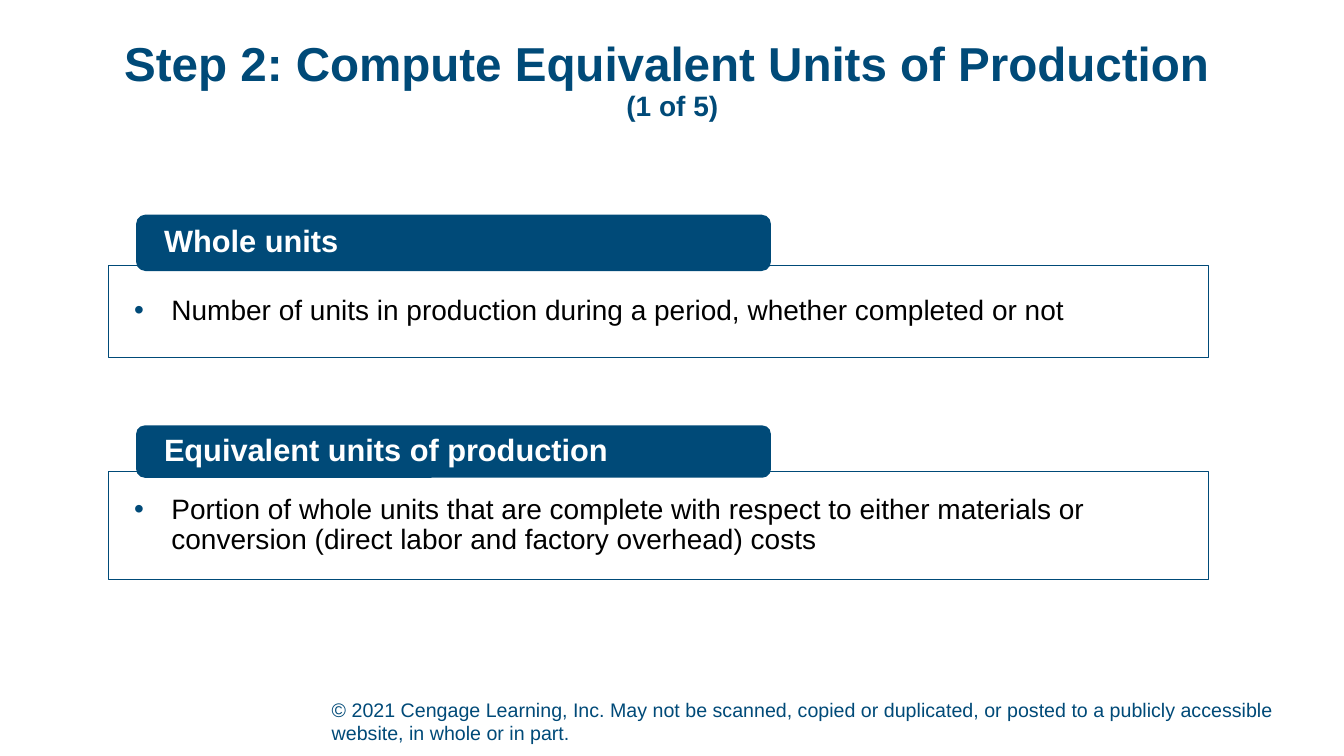
from lxml.etree import SubElement
from pptx import Presentation
from pptx.dml.color import RGBColor
from pptx.enum.shapes import MSO_SHAPE
from pptx.enum.text import MSO_ANCHOR, PP_ALIGN
from pptx.oxml.ns import qn
from pptx.util import Cm, Pt

COLORS = {"navy": "004A78", "white": "FFFFFF", "black": "000000"}
FONT = "Arial"

TITLE = "Step 2: Compute Equivalent Units of Production"
TITLE_PART = "(1 of 5)"
COPYRIGHT = (
    "© 2021 Cengage Learning, Inc. May not be scanned, copied or duplicated, "
    "or posted to a publicly accessible website, in whole or in part."
)
DEFINITIONS = [
    {
        "term": "Whole units",
        "meaning": "Number of units in production during a period, whether completed or not",
        "tab_top": 5.41, "tab_height": 1.42, "box_top": 6.7, "box_height": 2.31,
    },
    {
        "term": "Equivalent units of production",
        "meaning": "Portion of whole units that are complete with respect to either "
                   "materials or conversion (direct labor and factory overhead) costs",
        "tab_top": 10.72, "tab_height": 1.32, "box_top": 11.88, "box_height": 2.72,
    },
]
TAB_LEFT, TAB_WIDTH = 3.43, 16.0
BOX_LEFT, BOX_WIDTH = 2.74, 27.71


def color(name):
    return RGBColor.from_string(COLORS[name])


def add_run(paragraph, text, size, ink, bold=False):
    run = paragraph.add_run()
    run.text = text
    run.font.name = FONT
    run.font.size = Pt(size)
    run.font.bold = bold
    run.font.color.rgb = color(ink)


def write(shape, text, size=20, ink="navy", bold=False, align=PP_ALIGN.LEFT,
          anchor=MSO_ANCHOR.MIDDLE, line_spacing=0.9, margin_left=0, indent=0,
          bullet=None, bottom=0):
    frame = shape.text_frame
    frame.word_wrap = True
    frame.vertical_anchor = anchor
    frame.margin_left = frame.margin_right = frame.margin_top = 0
    frame.margin_bottom = Cm(bottom)
    paragraph = frame.paragraphs[0]
    properties = paragraph._p.get_or_add_pPr()
    properties.set("marL", str(Cm(margin_left)))
    properties.set("indent", str(Cm(indent)))
    if bullet:
        bullet_color = SubElement(properties, qn("a:buClr"))
        SubElement(bullet_color, qn("a:srgbClr")).set("val", COLORS["navy"])
        SubElement(properties, qn("a:buFont")).set("typeface", FONT)
        SubElement(properties, qn("a:buChar")).set("char", bullet)
    paragraph.alignment = align
    paragraph.line_spacing = line_spacing
    add_run(paragraph, text, size, ink, bold)
    return paragraph


def add_panel(slide, kind, left, top, width, height, fill=None):
    shape = slide.shapes.add_shape(kind, Cm(left), Cm(top), Cm(width), Cm(height))
    shape.shadow.inherit = False
    if fill:
        shape.fill.solid()
        shape.fill.fore_color.rgb = color(fill)
        shape.line.fill.background()
    else:
        shape.fill.background()
        shape.line.color.rgb = color("navy")
        shape.line.width = Pt(0.75)
    return shape


def main():
    presentation = Presentation()
    presentation.slide_width = Cm(33.87)
    presentation.slide_height = Cm(19.05)
    slide = presentation.slides.add_slide(presentation.slide_layouts[6])

    footer = slide.shapes.add_textbox(Cm(8.36), Cm(17.58), Cm(24.87), Cm(1.32))
    write(footer, COPYRIGHT, size=14, anchor=MSO_ANCHOR.BOTTOM, line_spacing=1.0,
          bottom=0.13)

    title = slide.shapes.add_textbox(Cm(2.34), Cm(1.02), Cm(29.21), Cm(1.88))
    heading = write(title, TITLE, size=34, bold=True, align=PP_ALIGN.CENTER,
                    anchor=MSO_ANCHOR.TOP)
    add_run(heading, " ", 28, "navy", bold=True)
    heading.add_line_break()
    add_run(heading, TITLE_PART, 20, "navy", bold=True)

    for definition in DEFINITIONS:
        tab = add_panel(slide, MSO_SHAPE.ROUNDED_RECTANGLE, TAB_LEFT,
                        definition["tab_top"], TAB_WIDTH, definition["tab_height"],
                        fill="navy")
        write(tab, definition["term"], size=22, ink="white", bold=True, margin_left=0.64)
        box = add_panel(slide, MSO_SHAPE.RECTANGLE, BOX_LEFT, definition["box_top"],
                        BOX_WIDTH, definition["box_height"])
        write(box, definition["meaning"], ink="black", margin_left=1.58, indent=-0.94,
              bullet="•")

    presentation.save("out.pptx")


if __name__ == "__main__":
    main()
